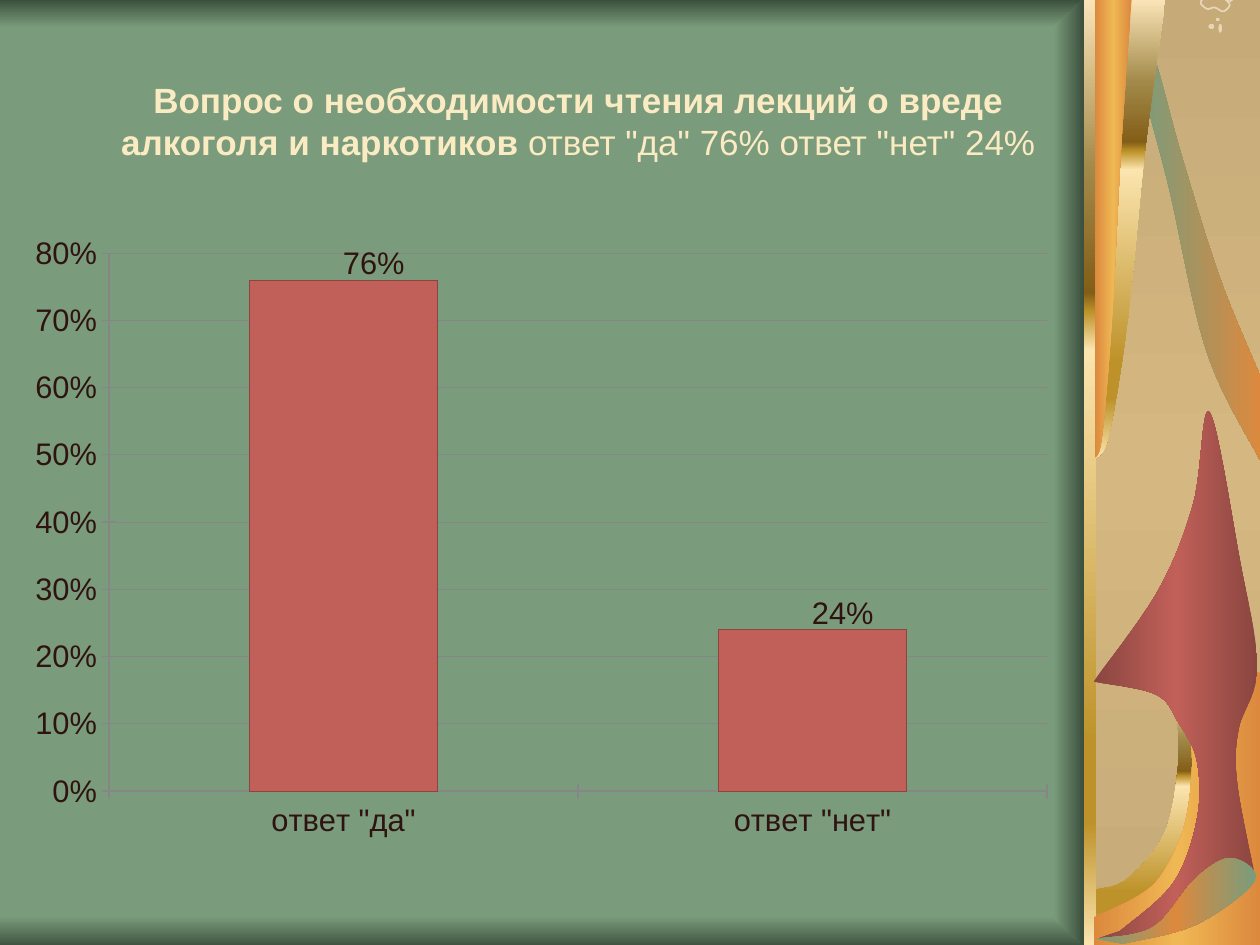
from lxml.etree import SubElement
from pptx import Presentation
from pptx.chart.data import CategoryChartData
from pptx.dml.color import RGBColor
from pptx.enum.chart import XL_CHART_TYPE as ChartType, XL_LABEL_POSITION as LabelPosition
from pptx.enum.chart import XL_TICK_MARK as TickMark
from pptx.enum.shapes import MSO_SHAPE as Preset
from pptx.enum.text import MSO_ANCHOR as Anchor, PP_ALIGN as Align
from pptx.oxml.ns import qn
from pptx.util import Pt

PX = 9144  # 100 px to the inch
WIDTH, HEIGHT = 1000, 750
CURVE_STEPS = 12
FONT = "Arial"

GREEN = RGBColor.from_string("7A9C7C")
DARK_GREEN = RGBColor.from_string("3C503D")
SAND = RGBColor.from_string("C6AA78")
LIGHT_SAND = RGBColor.from_string("D5B781")
PALE = RGBColor.from_string("E7D6B7")
CREAM = RGBColor.from_string("FBEBC3")
ORANGE = RGBColor.from_string("DC893E")
AMBER = RGBColor.from_string("F0B854")
RED = RGBColor.from_string("C16059")
DARK_RED = RGBColor.from_string("8A4540")
INK = RGBColor.from_string("2F1311")
GRAY = RGBColor.from_string("868686")
IVORY = RGBColor.from_string("FAE3B7")
LIGHT_GOLD = RGBColor.from_string("FBE4AE")
GOLD = RGBColor.from_string("BD922A")
OLIVE = RGBColor.from_string("A28949")
BRONZE = RGBColor.from_string("835E17")

SHADE = {0: GREEN, 100: DARK_GREEN}
SHADE_BACK = {0: DARK_GREEN, 100: GREEN}
SAND_BLEND = {0: SAND, 50: LIGHT_SAND, 100: SAND}
METAL = {0: IVORY, 18: OLIVE, 31: BRONZE, 33: GOLD, 37: LIGHT_GOLD,
         79: GOLD, 87: GOLD, 100: LIGHT_GOLD}
ORANGE_BLEND = {0: ORANGE, 50: AMBER, 100: ORANGE}
RED_BLEND = {0: DARK_RED, 50: RED, 100: DARK_RED}
RIBBON_BLEND = {0: GREEN, 100: ORANGE}
LEAF_BLEND = {0: GREEN, 50: ORANGE, 100: GREEN}
PLAIN = {0: PALE, 100: PALE}


def paint(shape, stops, angle):
    """Fill with a gradient and no outline; angle 90 runs downwards."""
    shape.line.fill.background()
    shape.fill.gradient()
    shape.fill.gradient_angle = -angle % 360
    stop_list = next(shape._element.iter(qn("a:gsLst")))
    stop_list.clear()
    for position, color in stops.items():
        stop = SubElement(stop_list, qn("a:gs"), pos=str(position * 1000))
        SubElement(stop, qn("a:srgbClr"), val=str(color))


def add_text(para, text, size=20, color=CREAM, bold=False):
    span = para.add_run()
    span.text = text
    span.font.name, span.font.size, span.font.bold = FONT, Pt(size), bold
    span.font.color.rgb = color


deck = Presentation()
deck.slide_width, deck.slide_height = WIDTH * PX, HEIGHT * PX
page = deck.slides.add_slide(deck.slide_layouts[6])
page.background.fill.solid()
page.background.fill.fore_color.rgb = GREEN

# Straight bands, then the dot and seeds of the flower
for preset, left, top, width, height, stops in [
    (Preset.RECTANGLE, 0, 727, 884, 25, SHADE),
    (Preset.RECTANGLE, 0, 0, 884, 22, SHADE_BACK),
    (Preset.RECTANGLE, 870, 0, 132, HEIGHT, SAND_BLEND),
    (Preset.RECTANGLE, 860, 0, 10, HEIGHT, METAL),
    (Preset.OVAL, 965, 14, 3, 3, PLAIN),
    (Preset.OVAL, 967, 19, 3, 7, PLAIN),
    (Preset.OVAL, 959, 19, 5, 4, PLAIN),
]:
    band = page.shapes.add_shape(preset, left * PX, top * PX, width * PX, height * PX)
    band.shadow.inherit = False
    paint(band, stops, 90)

# Each outline is made of smooth runs, joined by straight lines
hanging = [(869, 364), (880, 346), (895, 254), (909, 118), (925, 0)]
narrow_hanging = [(869 + (x - 869) * 0.52, y) for x, y in hanging]
ornaments = [
    ([[(958, -4), (953, 2), (958, 7), (964, 6), (971, 9), (976, 4), (972, -1)]], None, 0),
    ([[(970, -3), (976, 1), (981, -4)]], None, 0),
    ([[(870, 706), (894, 698), (924, 662), (935, 608), (934, 564)],
      [(WIDTH, 550)], [(WIDTH, HEIGHT)], [(870, HEIGHT)]], METAL, 90),
    ([[(868, 728), (905, 710), (924, 691), (940, 655), (946, 610), (944, 576)],
      [(987, 531)], [(WIDTH, 534)], [(WIDTH, HEIGHT)], [(868, HEIGHT)]], ORANGE_BLEND, 0),
    ([[(868, 541), (919, 469), (947, 400), (960, 327), (984, 444), (998, 530),
       (983, 579), (982, 622), (996, 695)],
      [(971, 690), (954, 707), (934, 734), (871, 745)],
      [(889, 739), (931, 701), (950, 650), (950, 604), (935, 573), (917, 551),
       (868, 541)]], RED_BLEND, 0),
    ([[(WIDTH, 365), (958, 280), (928, 150), (905, 58), (914, 40), (938, 124),
       (968, 220), (WIDTH, 298)]], RIBBON_BLEND, 0),
    ([hanging, [(869, 0)]], METAL, 90),
    ([narrow_hanging, [(869, 0)]], ORANGE_BLEND, 0),
    ([[(870, 745), (915, 736), (949, 697), (977, 681), (996, 699), (949, 734),
       (891, 749)]], LEAF_BLEND, 0),
    ([[(860, 0)], [(836, 21)], [(836, 729)], [(860, HEIGHT)]], SHADE, 0),
]
for runs, stops, angle in ornaments:
    points = []
    for run in runs:
        points.append(run[0])
        padded = [run[0], *run, run[-1]]
        for before, start, end, after in zip(padded, padded[1:], padded[2:], padded[3:]):
            for step in range(1, CURVE_STEPS + 1):
                t = step / CURVE_STEPS
                points.append(tuple(
                    b + t / 2 * (c - a + t * (2 * a - 5 * b + 4 * c - d
                                              + t * (3 * b - a - 3 * c + d)))
                    for a, b, c, d in zip(before, start, end, after)))
    first, *rest = [(x * PX, y * PX) for x, y in points]
    builder = page.shapes.build_freeform(*first)
    builder.add_line_segments(rest, close=stops is not None)
    shape = builder.convert_to_shape()
    shape.shadow.inherit = False
    if stops:
        paint(shape, stops, angle)
    else:
        shape.fill.background()
        shape.line.color.rgb = PALE
        shape.line.width = Pt(1)

# Title
box = page.shapes.add_textbox(55 * PX, 23 * PX, 808 * PX, 161 * PX)
frame = box.text_frame
frame.word_wrap = True
frame.vertical_anchor = Anchor.TOP
frame.margin_top = 39 * PX
para = frame.paragraphs[0]
para.alignment = Align.CENTER
add_text(para, "Вопрос о необходимости чтения лекций о вреде алкоголя и наркотиков", bold=True)
add_text(para, " ответ \"да\" 76% ответ \"нет\" 24%")

# Chart of the answers
answers = CategoryChartData(number_format="0%")
answers.categories = ["ответ \"да\"", "ответ \"нет\""]
answers.add_series("Series 1", (0.76, 0.24))
chart = page.shapes.add_chart(ChartType.COLUMN_CLUSTERED, 28 * PX, 187 * PX,
                              819 * PX, 479 * PX, answers).chart
chart.has_legend = chart.has_title = False
chart.font.name, chart.font.size = FONT, Pt(18)
chart.font.color.rgb = INK

plot = chart.plots[0]
plot.gap_width = 150
plot.vary_by_categories = False
series = plot.series[0]
series.format.fill.solid()
series.format.fill.fore_color.rgb = RED
series.format.line.color.rgb = DARK_RED

scale = chart.value_axis
scale.minimum_scale, scale.maximum_scale, scale.major_unit = 0, 0.8, 0.1
scale.tick_labels.number_format = "0%"
scale.tick_labels.number_format_is_linked = False
scale.has_major_gridlines = True
for axis in (scale, chart.category_axis):
    axis.major_tick_mark = TickMark.CROSS
    axis.format.line.color.rgb = GRAY
scale.major_gridlines.format.line.color.rgb = GRAY
scale.major_gridlines.format.line.width = Pt(0.5)

# Manual places: the plot area, and both value labels moved to the right
plot_area = next(chart._chartSpace.iter(qn("c:plotArea")))
for old in plot_area.findall(qn("c:layout")):
    plot_area.remove(old)
places = [(plot_area, 0, {"layoutTarget": "inner", "xMode": "edge", "yMode": "edge",
                          "x": 0.05, "y": 0.02, "w": 0.93, "h": 0.9})]
for point in (series.points[0], series.points[1]):
    point.data_label.position = LabelPosition.OUTSIDE_END
for label in plot_area.iter(qn("c:dLbl")):
    places.append((label, 1, {"x": 0.03, "y": 0.01}))
for parent, index, settings in places:
    layout = parent.makeelement(qn("c:layout"))
    parent.insert(index, layout)
    manual = SubElement(layout, qn("c:manualLayout"))
    for name, value in settings.items():
        SubElement(manual, qn(f"c:{name}"), val=str(value))

deck.save("out.pptx")
